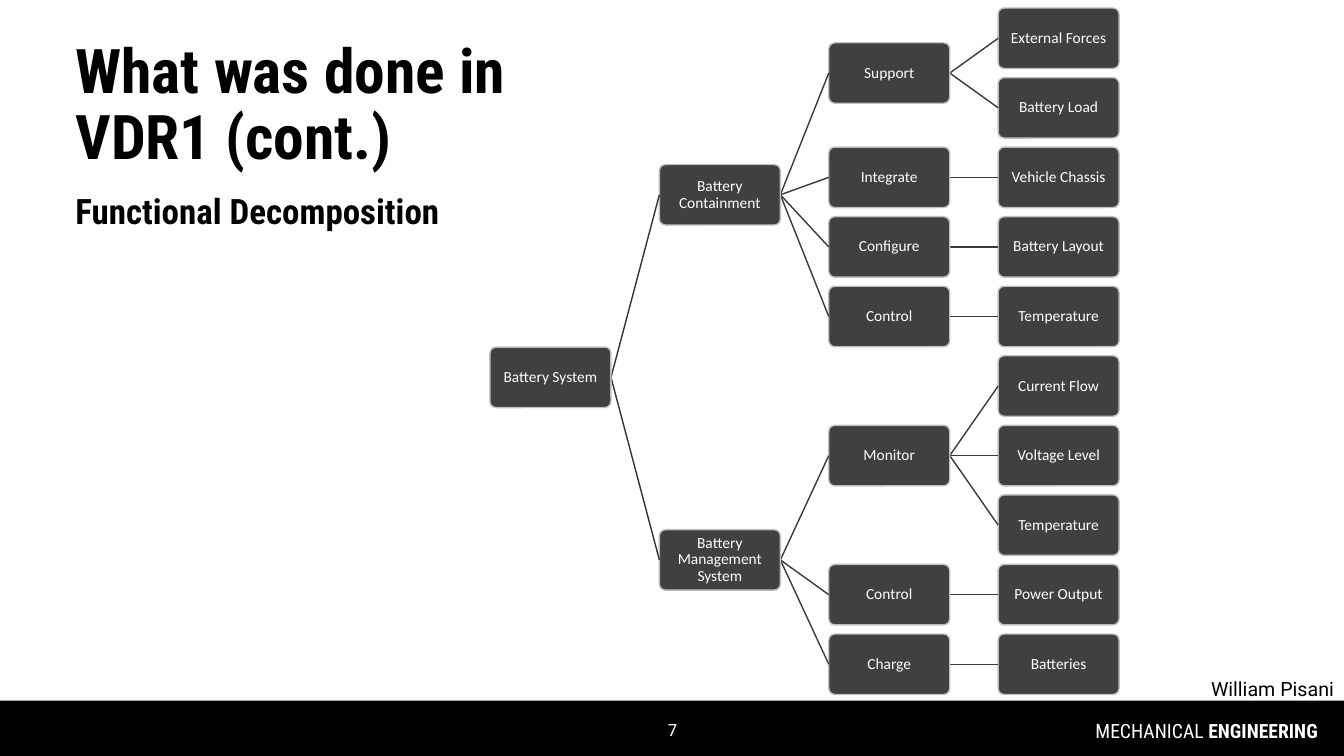
from dataclasses import dataclass
from itertools import count

from lxml import etree
from pptx import Presentation
from pptx.dml.color import RGBColor
from pptx.enum.shapes import MSO_CONNECTOR, MSO_SHAPE
from pptx.enum.text import MSO_ANCHOR, PP_ALIGN
from pptx.oxml.ns import qn
from pptx.util import Inches, Pt

LEFT, CENTER, RIGHT = PP_ALIGN.LEFT, PP_ALIGN.CENTER, PP_ALIGN.RIGHT
TOP, MIDDLE = MSO_ANCHOR.TOP, MSO_ANCHOR.MIDDLE
RECTANGLE, ROUNDED = MSO_SHAPE.RECTANGLE, MSO_SHAPE.ROUNDED_RECTANGLE
STRAIGHT = MSO_CONNECTOR.STRAIGHT


@dataclass(frozen=True)
class Theme:
    black: RGBColor = RGBColor.from_string("000000")
    white: RGBColor = RGBColor.from_string("FFFFFF")
    node_fill: RGBColor = RGBColor.from_string("404040")
    node_border: RGBColor = RGBColor.from_string("BFBFBF")
    root_link: RGBColor = RGBColor.from_string("333333")
    link: RGBColor = RGBColor.from_string("3A3A3A")
    heading_font: str = "Roboto Condensed"
    body_font: str = "Roboto"
    node_font: str = "Calibri"
    title_size: int = 44
    subtitle_size: int = 25
    label_size: int = 14
    number_size: int = 12
    node_size: int = 11


THEME = Theme()

NODE_W, NODE_H = 1.2, 0.6
COLUMN_LEFT, COLUMN_PITCH = 4.86, 1.68
FIRST_LEAF_Y, LEAF_PITCH = 0.38, 0.69

FUNCTIONS = ("Battery System", [
    ("Battery Containment", [
        ("Support", [("External Forces", []), ("Battery Load", [])]),
        ("Integrate", [("Vehicle Chassis", [])]),
        ("Configure", [("Battery Layout", [])]),
        ("Control", [("Temperature", [])]),
    ]),
    ("Battery Management System", [
        ("Monitor", [("Current Flow", []), ("Voltage Level", []), ("Temperature", [])]),
        ("Control", [("Power Output", [])]),
        ("Charge", [("Batteries", [])]),
    ]),
])


def write_text(shape, runs, font, size, color, align, anchor=TOP, spacing=1.0, margins=None):
    """Fill a shape with one paragraph of (text, bold) runs."""
    frame = shape.text_frame
    frame.word_wrap = True
    frame.vertical_anchor = anchor
    for side, inset in (margins or {}).items():
        setattr(frame, f"margin_{side}", Inches(inset))
    paragraph = frame.paragraphs[0]
    paragraph.alignment = align
    paragraph.line_spacing = spacing
    for text, bold in runs:
        run = paragraph.add_run()
        run.text = text
        for name, value in {"name": font, "size": Pt(size), "bold": bold}.items():
            setattr(run.font, name, value)
        run.font.color.rgb = color


def add_label(slide, box, runs, font, size, color, align, **layout):
    label = slide.shapes.add_textbox(*map(Inches, box))
    write_text(label, runs, font, size, color, align, **layout)


def add_heading(slide, top, text, size):
    """Heading whose deep bottom inset lifts the text above its box centre."""
    add_label(slide, (0.65, top, 4.72, 0.95), [(text, True)], THEME.heading_font, size,
              THEME.black, LEFT, anchor=MIDDLE, spacing=0.9, margins={"bottom": 0.77})


def add_block(slide, preset, box, fill):
    block = slide.shapes.add_shape(preset, *map(Inches, box))
    block.shadow.inherit = False
    block.fill.solid()
    block.fill.fore_color.rgb = fill
    block.line.fill.background()
    return block


def add_node(slide, left, center_y, text):
    node = add_block(slide, ROUNDED, (left, center_y - NODE_H / 2, NODE_W, NODE_H),
                     THEME.node_fill)
    node.adjustments[0] = 0.1
    node.line.color.rgb = THEME.node_border
    node.line.width = Pt(1)
    write_text(node, [(text, False)], THEME.node_font, THEME.node_size, THEME.white, CENTER,
               anchor=MIDDLE, spacing=0.9,
               margins=dict.fromkeys(("left", "top", "right", "bottom"), 0.02))


def add_link(slide, start, end, color):
    link = slide.shapes.add_connector(STRAIGHT, *map(Inches, (*start, *end)))
    link.line.color.rgb = color
    link.line.width = Pt(1)
    etree.SubElement(link._element.spPr, qn("a:effectLst"))


def add_branch(slide, branch, leaf_rows, depth=0):
    """Draw a branch, centred on its first and last child, and return its centre height."""
    text, children = branch
    left = COLUMN_LEFT + depth * COLUMN_PITCH
    child_ys = [add_branch(slide, child, leaf_rows, depth + 1) for child in children]
    if child_ys:
        center_y = (child_ys[0] + child_ys[-1]) / 2
    else:
        center_y = FIRST_LEAF_Y + next(leaf_rows) * LEAF_PITCH
    color = THEME.link if depth else THEME.root_link
    for child_y in child_ys:
        add_link(slide, (left + NODE_W, center_y), (left + COLUMN_PITCH, child_y), color)
    add_node(slide, left, center_y, text)
    return center_y


def add_footer(slide):
    add_block(slide, RECTANGLE, (0, 6.95, 13.33, 0.55), THEME.black)
    add_label(slide, (10.17, 7.08, 3, 0.4), [("MECHANICAL ", False), ("ENGINEERING", True)],
              THEME.heading_font, THEME.label_size, THEME.white, RIGHT)
    add_label(slide, (5.17, 7.04, 3, 0.4), [("7", False)], THEME.body_font,
              THEME.number_size, THEME.white, CENTER, anchor=MIDDLE)
    add_label(slide, (9.83, 6.69, 3.5, 0.25), [("William Pisani", False)], THEME.body_font,
              THEME.label_size, THEME.black, RIGHT, spacing=0.9)


def main():
    deck = Presentation()
    deck.slide_width, deck.slide_height = Inches(13.33), Inches(7.5)
    slide = deck.slides.add_slide(deck.slide_layouts[6])
    add_footer(slide)
    add_branch(slide, FUNCTIONS, count())
    add_heading(slide, 0.94, "What was done in VDR1 (cont.)", THEME.title_size)
    add_heading(slide, 2, "Functional Decomposition", THEME.subtitle_size)
    deck.save("out.pptx")


if __name__ == "__main__":
    main()
